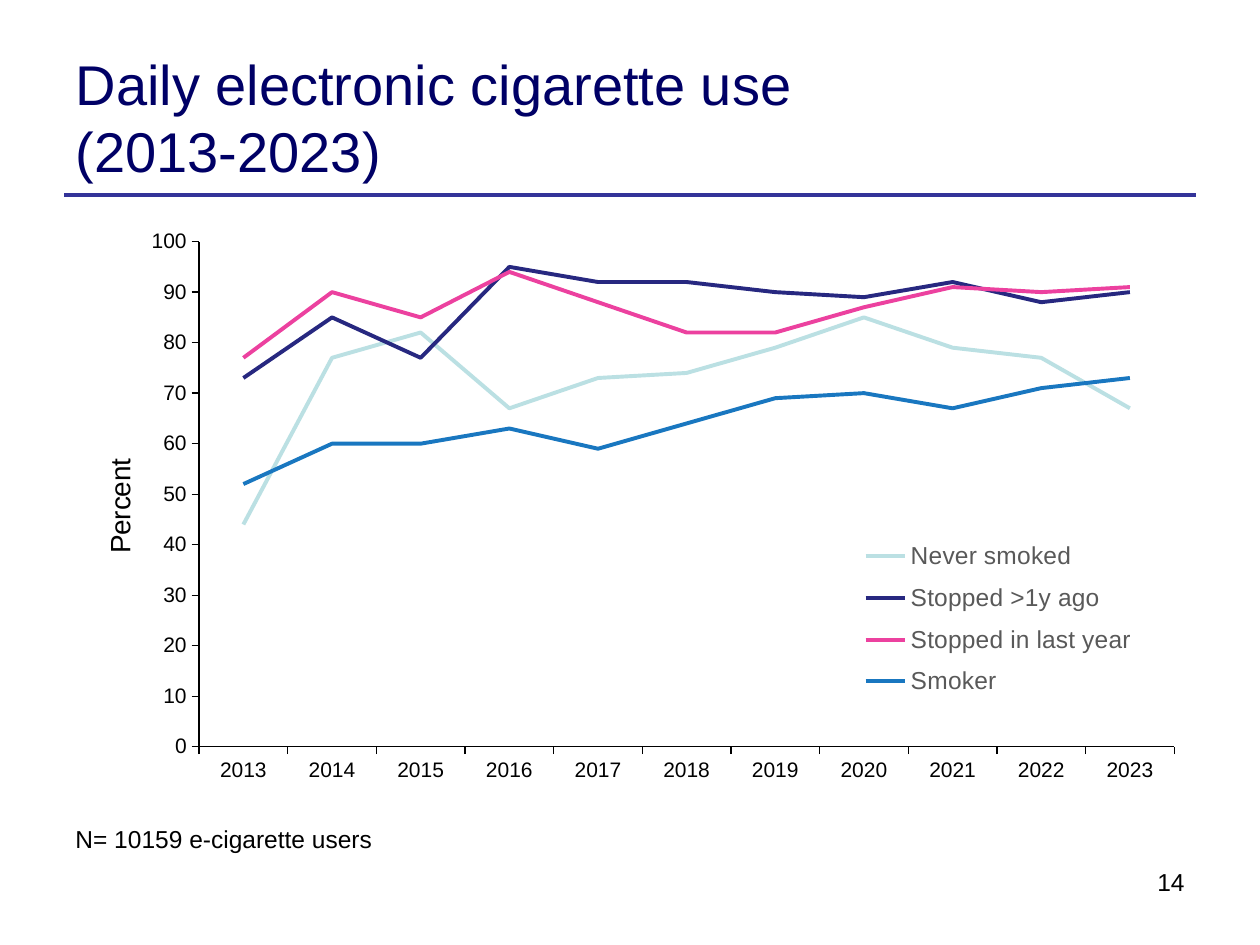
"""Build a slide with a line chart of daily electronic cigarette use, 2013-2023."""
from lxml.etree import SubElement
from pptx import Presentation
from pptx.chart.data import CategoryChartData
from pptx.dml.color import RGBColor
from pptx.enum.chart import XL_CHART_TYPE as ChartType, XL_LEGEND_POSITION as LegendPos, XL_TICK_MARK as Tick
from pptx.enum.shapes import MSO_CONNECTOR as Connector
from pptx.enum.text import MSO_ANCHOR as Anchor, PP_ALIGN as Align
from pptx.oxml import parse_xml
from pptx.oxml.ns import nsdecls, qn
from pptx.util import Inches, Pt


def style(font, size, color):
    font.name, font.size, font.bold = "Arial", Pt(size), False
    font.color.rgb = RGBColor.from_string(color)


def place(element, index, inner=False, **fractions):
    for old in element.findall(qn("c:layout")):
        element.remove(old)
    target = '<c:layoutTarget val="inner"/>' if inner else ""
    modes = "".join(f'<c:{key}Mode val="edge"/>' for key in "xy")
    sizes = "".join(f'<c:{key} val="{value}"/>' for key, value in fractions.items())
    element.insert(index, parse_xml(
        f'<c:layout {nsdecls("c")}><c:manualLayout>{target}{modes}{sizes}</c:manualLayout></c:layout>'))


prs = Presentation()
prs.slide_width, prs.slide_height = Inches(10), Inches(7.5)
slide = prs.slides.add_slide(prs.slide_layouts[5])

rule = slide.shapes.add_connector(Connector.STRAIGHT, Inches(0.51), Inches(1.55), Inches(9.49), Inches(1.55))
rule.line.color.rgb = RGBColor.from_string("333399")
rule.line.width = Pt(2.25)
SubElement(rule._element.spPr, qn("a:effectLst"))

title = slide.shapes.title
title.left, title.top, title.width, title.height = Inches(0.5), Inches(0.3), Inches(7.89), Inches(1.25)
title.text_frame.text = "Daily electronic cigarette use\v(2013-2023)"
title.text_frame.vertical_anchor = Anchor.MIDDLE
heading = title.text_frame.paragraphs[0]
heading.alignment = Align.LEFT
style(heading.font, 32, "000066")
for run in heading.runs:
    style(run.font, 32, "000066")

groups = [
    ("Never smoked", "BBE0E3", [44, 77, 82, 67, 73, 74, 79, 85, 79, 77, 67]),
    ("Stopped >1y ago", "272880", [73, 85, 77, 95, 92, 92, 90, 89, 92, 88, 90]),
    ("Stopped in last year", "EC419F", [77, 90, 85, 94, 88, 82, 82, 87, 91, 90, 91]),
    ("Smoker", "1977C0", [52, 60, 60, 63, 59, 64, 69, 70, 67, 71, 73]),
]
usage = CategoryChartData()
usage.categories = [str(year) for year in range(2013, 2024)]
for name, color, percentages in groups:
    usage.add_series(name, percentages)
chart = slide.shapes.add_chart(
    ChartType.LINE, Inches(0.5), Inches(1.72), Inches(9), Inches(4.95), usage).chart
style(chart.font, 10, "000000")
chart.has_title = False
for series, (name, color, percentages) in zip(chart.plots[0].series, groups):
    series.smooth = False
    series.format.line.color.rgb = RGBColor.from_string(color)
    series.format.line.width = Pt(2.25)

years, percent = chart.category_axis, chart.value_axis
for axis in (years, percent):
    axis.has_major_gridlines = False
    axis.major_tick_mark, axis.minor_tick_mark = Tick.OUTSIDE, Tick.NONE
    axis.format.line.color.rgb = RGBColor.from_string("000000")
    axis.format.line.width = Pt(0.75)
    style(axis.tick_labels.font, 12, "000000")
percent.minimum_scale, percent.maximum_scale, percent.major_unit = 0, 100, 10
axis_title = percent.axis_title
axis_title.text_frame.text = "Percent"
style(axis_title.text_frame.paragraphs[0].runs[0].font, 16, "000000")

chart.has_legend = True
chart.legend.position = LegendPos.BOTTOM
chart.legend.include_in_layout = True
style(chart.legend.font, 14, "595959")

place(chart.plots[0]._element.getparent(), 0, inner=True, x=0.12, y=0.04, w=0.86, h=0.81)
place(axis_title._element, 1, x=0.03, y=0.38)
place(chart.legend._element, 1, x=0.7, y=0.5, w=0.25, h=0.29)

captions = [
    ("14", Align.RIGHT, 6.73, 6.83, 2.77, 0.52),
    ("N= 10159 e-cigarette users", Align.LEFT, 0.5, 6.49, 8.51, 0.34),
]
for text, alignment, *bounds in captions:
    caption = slide.shapes.add_textbox(*map(Inches, bounds)).text_frame
    caption.word_wrap = True
    caption.text = text
    caption.paragraphs[0].alignment = alignment
    style(caption.paragraphs[0].runs[0].font, 14, "000000")

prs.save("out.pptx")
